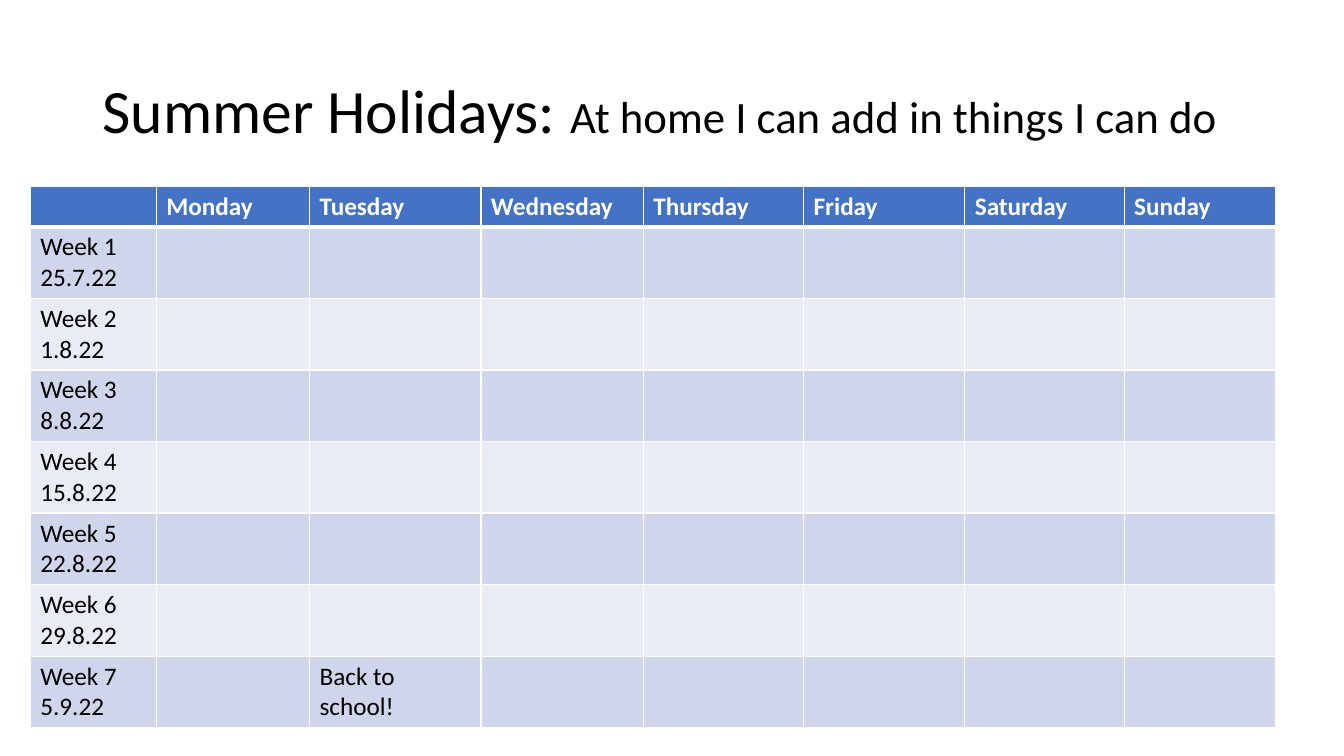
from pptx import Presentation
from pptx.dml.color import RGBColor
from pptx.enum.text import MSO_ANCHOR
from pptx.oxml import parse_xml
from pptx.oxml.ns import nsdecls
from pptx.util import Inches, Pt

COLORS = {
    "text": "000000",
    "white": "FFFFFF",
    "header": "4472C4",
    "odd week": "CFD5EA",
    "even week": "E9EBF5",
}
DAYS = ["Monday", "Tuesday", "Wednesday", "Thursday", "Friday", "Saturday", "Sunday"]
WEEK_STARTS = ["25.7.22", "1.8.22", "8.8.22", "15.8.22", "22.8.22", "29.8.22", "5.9.22"]
COLUMN_WIDTHS = [1.25, 1.52, 1.7, 1.61, 1.59, 1.6, 1.58, 1.5]
HEADER_HEIGHT, WEEK_HEIGHT = 0.4, 0.71


def add_span(para, text, size, color, bold=False):
    span = para.add_run()
    span.text = text
    for name, value in {"name": "Calibri", "size": Pt(size), "bold": bold}.items():
        setattr(span.font, name, value)
    span.font.color.rgb = RGBColor.from_string(COLORS[color])


def add_borders(cell, bottom_width):
    properties = cell._tc.get_or_add_tcPr()
    widths = {"lnL": 1, "lnR": 1, "lnT": 1, "lnB": bottom_width}
    for position, (side, width) in enumerate(widths.items()):
        properties.insert(position, parse_xml(
            f'<a:{side} {nsdecls("a")} w="{Pt(width)}"><a:solidFill>'
            f'<a:srgbClr val="{COLORS["white"]}"/></a:solidFill></a:{side}>'))


deck = Presentation()
deck.slide_width, deck.slide_height = Inches(13.33), Inches(7.5)
page = deck.slides.add_slide(deck.slide_layouts[6])

# Title
box = page.shapes.add_textbox(Inches(0.92), Inches(0.4), Inches(11.5), Inches(1.45))
frame = box.text_frame
frame.word_wrap = True
frame.vertical_anchor = MSO_ANCHOR.MIDDLE
para = frame.paragraphs[0]
para.line_spacing = 0.9
add_span(para, "Summer Holidays: ", 44, "text")
add_span(para, "At home I can add in things I can do", 32, "text")

# Calendar contents: each cell holds a list of lines
rows = [[[]] + [[day] for day in DAYS]]
for number, start in enumerate(WEEK_STARTS, 1):
    rows.append([[f"Week {number}", start]] + [[] for day in DAYS])
rows[-1][1 + DAYS.index("Tuesday")] = ["Back to school!"]

# Calendar table
table = page.shapes.add_table(
    len(rows), len(COLUMN_WIDTHS), Inches(0.3), Inches(1.85),
    Inches(sum(COLUMN_WIDTHS)), Inches(HEADER_HEIGHT + WEEK_HEIGHT * len(WEEK_STARTS))).table
for column, width in zip(table.columns, COLUMN_WIDTHS):
    column.width = Inches(width)

for row_number, row in enumerate(rows):
    is_header = row_number == 0
    table.rows[row_number].height = Inches(HEADER_HEIGHT if is_header else WEEK_HEIGHT)
    fill = "header" if is_header else "odd week" if row_number % 2 else "even week"
    for column_number, lines in enumerate(row):
        cell = table.cell(row_number, column_number)
        cell.fill.solid()
        cell.fill.fore_color.rgb = RGBColor.from_string(COLORS[fill])
        add_borders(cell, 3 if is_header else 1)
        for line_number, line in enumerate(lines):
            frame = cell.text_frame
            para = frame.add_paragraph() if line_number else frame.paragraphs[0]
            add_span(para, line, 18, "white" if is_header else "text", is_header)

deck.save("out.pptx")
